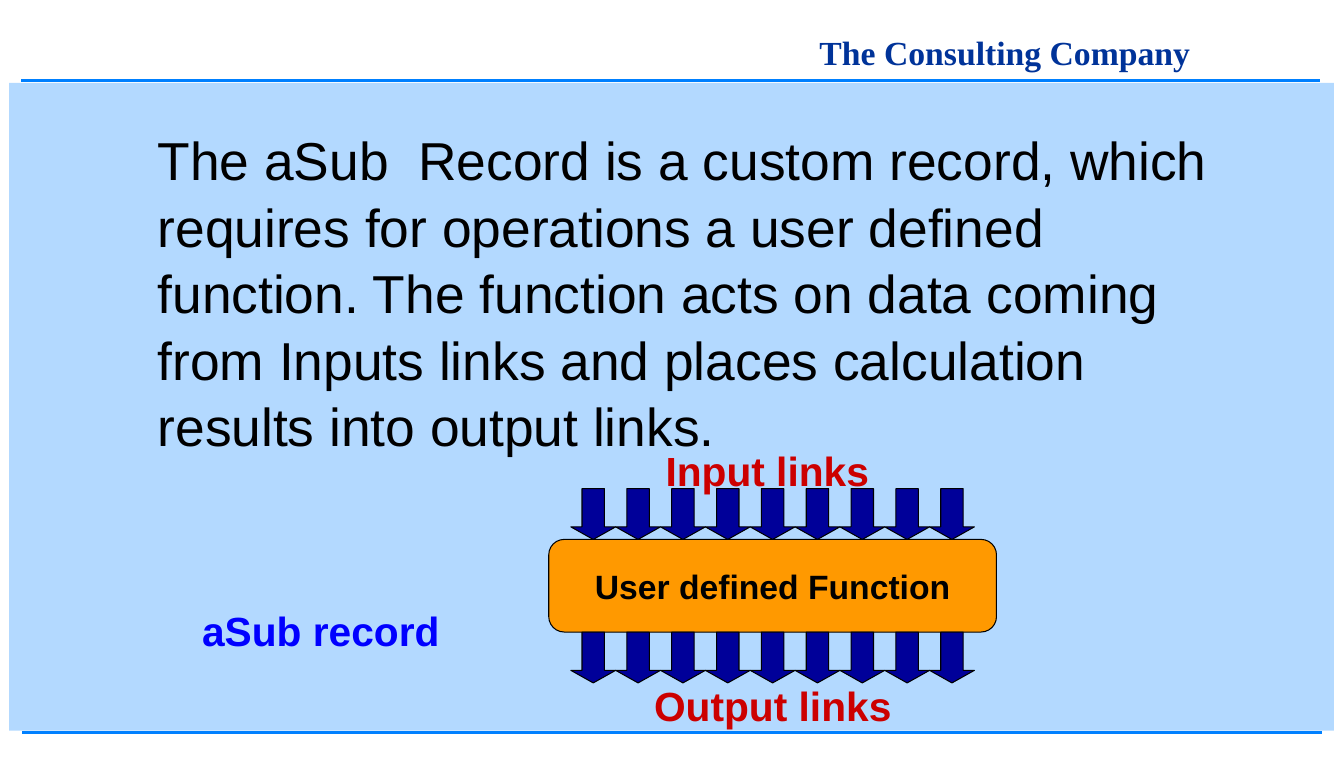
"""Build the slide that explains the aSub record and its links."""
from dataclasses import dataclass
from lxml import etree
from pptx import Presentation
from pptx.dml.color import RGBColor
from pptx.enum.shapes import MSO_CONNECTOR, MSO_SHAPE
from pptx.enum.text import MSO_ANCHOR, MSO_AUTO_SIZE, PP_ALIGN
from pptx.oxml.ns import qn
from pptx.util import Pt

LEFT, CENTER = PP_ALIGN.LEFT, PP_ALIGN.CENTER
TOP, MIDDLE = MSO_ANCHOR.TOP, MSO_ANCHOR.MIDDLE
NO_FIT = MSO_AUTO_SIZE.NONE
RECT, ARROW = MSO_SHAPE.RECTANGLE, MSO_SHAPE.DOWN_ARROW
PROCESS = MSO_SHAPE.FLOWCHART_ALTERNATE_PROCESS
STRAIGHT = MSO_CONNECTOR.STRAIGHT


@dataclass(frozen=True)
class Theme:
    panel: str = "B3D9FF"
    rule: str = "0080FF"
    header: str = "003399"
    text: str = "000000"
    function: str = "FF9900"
    arrow: str = "000099"
    record: str = "0000FF"
    links: str = "CC0000"
    sans: str = "Arial"
    serif: str = "Times New Roman"
    body_size: int = 38
    label_size: int = 29
    small_size: int = 24


T = Theme()
SLIDE = (957.6, 540)
HEADER = ("The Consulting Company", (575.3, 18, 335.5, 37.4))
BODY = (
    "The aSub  Record is a custom record, which requires for operations "
    "a user defined function. The function acts on data coming from Inputs "
    "links and places calculation results into output links.",
    (103.7, 84.5, 789.8, 236.9),
)
FUNCTION = ("User defined Function", (391, 384.3, 319, 66))
LABELS = [
    ("aSub record", (135.4, 427, 223.2, 43.2), T.record, LEFT),
    ("Input links", (455, 313.2, 183.6, 43.2), T.links, CENTER),
    ("Output links", (447, 481, 207.4, 43.2), T.links, CENTER),
]
PANEL = (6.5, 59, 944, 461.5)
RULES = [(15.1, 57.6, 940.3), (15.8, 522, 941.8)]
LINK_COUNT, LINK_WIDTH, LINK_HEIGHT = 9, 31.95, 36.2


def place(sp, box):
    sp.left, sp.top, sp.width, sp.height = map(Pt, box)


def write(sp, text, *, size, color, font=T.sans, bold=False, align=LEFT,
          anchor=TOP, wrap=True, spacing=1.0):
    tf = sp.text_frame
    tf.auto_size, tf.word_wrap, tf.vertical_anchor = NO_FIT, wrap, anchor
    tf.margin_left = tf.margin_right = Pt(8.6)
    tf.margin_top = tf.margin_bottom = Pt(4.3)
    p = tf.paragraphs[0]
    p.alignment, p.line_spacing, p.space_before = align, spacing, Pt(0)
    r = p.add_run()
    r.text = text
    r.font.name, r.font.size, r.font.bold = font, Pt(size), bold
    r.font.color.rgb = RGBColor.from_string(color)
    return p


def add_block(shapes, kind, box, fill, outlined=True):
    sp = shapes.add_shape(kind, *map(Pt, box))
    sp.shadow.inherit = False
    sp.fill.solid()
    sp.fill.fore_color.rgb = RGBColor.from_string(fill)
    if outlined:
        sp.line.color.rgb = RGBColor.from_string(T.text)
        sp.line.width = Pt(0.75)
    else:
        sp.line.fill.background()
    return sp


def add_rule(shapes, left, y, right):
    line = shapes.add_connector(STRAIGHT, Pt(left), Pt(y), Pt(right), Pt(y))
    line.line.color.rgb = RGBColor.from_string(T.rule)
    line.line.width = Pt(2)
    etree.SubElement(line.element.spPr, qn("a:effectLst"))


def add_links(shapes, center, top):
    left = center - LINK_COUNT * LINK_WIDTH / 2
    for i in range(LINK_COUNT):
        box = (left + i * LINK_WIDTH, top, LINK_WIDTH, LINK_HEIGHT)
        arrow = add_block(shapes, ARROW, box, T.arrow)
        arrow.adjustments[1] = 0.28


def main():
    prs = Presentation()
    prs.slide_width, prs.slide_height = map(Pt, SLIDE)
    slide = prs.slides.add_slide(prs.slide_layouts[1])
    shapes = slide.shapes
    title, body = shapes.title, slide.placeholders[1]

    panel = add_block(shapes, RECT, PANEL, T.panel, outlined=False)
    title.element.addprevious(panel.element)
    for rule in RULES:
        add_rule(shapes, *rule)

    text, box = HEADER
    place(title, box)
    write(title, text, size=T.small_size, color=T.header, font=T.serif, bold=True)

    text, box = BODY
    place(body, box)
    p = write(body, text, size=T.body_size, color=T.text, spacing=1.04)
    pPr = p._p.get_or_add_pPr()
    pPr.set("marL", "0")
    pPr.set("indent", "0")
    etree.SubElement(pPr, qn("a:buNone"))

    text, box = FUNCTION
    left, top, width, height = box
    function = add_block(shapes, PROCESS, box, T.function)
    write(function, text, size=T.small_size, color=T.text, bold=True,
          align=CENTER, anchor=MIDDLE, wrap=False)
    for links_top in (top - LINK_HEIGHT, top + height):
        add_links(shapes, left + width / 2, links_top)

    for text, box, color, align in LABELS:
        label = shapes.add_textbox(*map(Pt, box))
        write(label, text, size=T.label_size, color=color, bold=True, align=align)

    prs.save("out.pptx")


if __name__ == "__main__":
    main()
